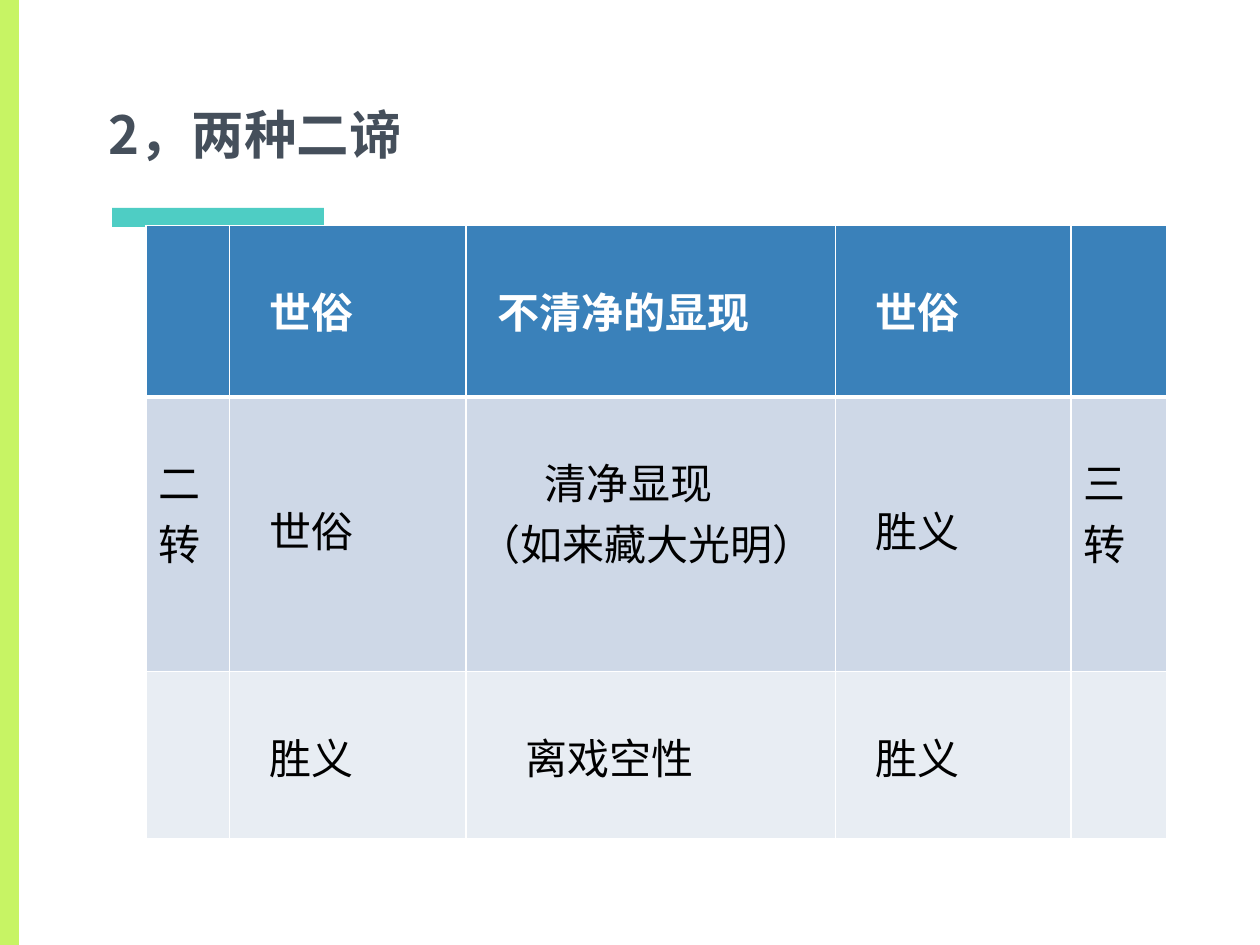
"""Build a slide comparing two pairs of the two truths in a table."""
from dataclasses import dataclass
from typing import Any

from lxml import etree
from pptx import Presentation
from pptx.dml.color import RGBColor
from pptx.enum import shapes, text
from pptx.oxml import ns
from pptx.util import Inches, Pt


@dataclass(frozen=True)
class Theme:
    title: str = "454F5B"
    stripe: str = "C7F464"
    accent: str = "4ECDC4"
    header: str = "3A81BA"
    body_fills: tuple[str, str] = ("CED8E7", "E8EDF3")
    white: str = "FFFFFF"
    black: str = "000000"
    latin: str = "Arial"
    chinese: str = "Noto Sans CJK SC"
    title_size: int = 30
    table_size: int = 24


@dataclass(frozen=True)
class Bar:
    left: float
    top: float
    width: float
    height: float
    color: str


@dataclass(frozen=True)
class Line:
    words: str
    indent: float = 0


@dataclass(frozen=True)
class Entry:
    lines: tuple[Line, ...] = ()
    top: float = 0.43


THEME = Theme()
BARS = (
    Bar(0.89, 1.65, 1.68, 0.15, THEME.accent),
    Bar(0, 0, 0.15, 7.5, THEME.stripe),
)
COLUMNS = (0.66, 1.88, 2.93, 1.87, 0.76)
ROWS = (1.36, 2.18, 1.33)
TERM_INDENT = 0.22
LOW = 0.81


def term(words: str, top: float = 0.43) -> Entry:
    """Return an entry holding one indented term."""
    return Entry((Line(words, TERM_INDENT),), top)


ENTRIES = (
    (Entry(), term("世俗"), Entry((Line("不清净的显现", 0.15),)), term("世俗"), Entry()),
    (
        Entry((Line("二转"),)),
        term("世俗", LOW),
        Entry((Line("清净显现", 0.52), Line("（如来藏大光明）"))),
        term("胜义", LOW),
        Entry((Line("三转"),)),
    ),
    (Entry(), term("胜义"), Entry((Line("离戏空性", 0.37),)), term("胜义"), Entry()),
)


def apply(target: Any, values: dict[str, Any]) -> None:
    """Set each named attribute on the target."""
    for name, value in values.items():
        setattr(target, name, value)


def style_run(run: Any, size: int, color: str, bold: bool, latin: str) -> None:
    """Format a run with its Latin and Chinese fonts."""
    apply(run.font, {"size": Pt(size), "bold": bold, "name": latin})
    run.font.color.rgb = RGBColor.from_string(color)
    properties = run._r.get_or_add_rPr()
    properties.set("lang", "zh-CN")
    etree.SubElement(properties, ns.qn("a:ea"), typeface=THEME.chinese)


def draw_bar(slide: Any, bar: Bar) -> None:
    """Draw a plain coloured bar."""
    box = map(Inches, (bar.left, bar.top, bar.width, bar.height))
    shape = slide.shapes.add_shape(shapes.MSO_SHAPE.RECTANGLE, *box)
    shape.shadow.inherit = False
    shape.fill.solid()
    shape.fill.fore_color.rgb = RGBColor.from_string(bar.color)
    shape.line.fill.background()


def draw_title(slide: Any, words: str) -> None:
    """Place and format the title placeholder."""
    title = slide.shapes.title
    apply(title, {"left": Inches(0.76), "top": Inches(0),
                  "width": Inches(8.49), "height": Inches(1.41)})
    margins = {f"margin_{side}": Inches(0.1) for side in ("left", "top", "right", "bottom")}
    apply(title.text_frame, margins | {
        "vertical_anchor": text.MSO_ANCHOR.BOTTOM,
        "auto_size": text.MSO_AUTO_SIZE.NONE,
        "word_wrap": True,
    })
    paragraph = title.text_frame.paragraphs[0]
    paragraph.alignment = text.PP_ALIGN.LEFT
    run = paragraph.add_run()
    run.text = words
    style_run(run, THEME.title_size, THEME.title, True, THEME.chinese)


def set_borders(cell: Any, widths: dict[str, float]) -> None:
    """Give a cell white borders of the given point widths."""
    properties = cell._tc.get_or_add_tcPr()
    for position, (side, width) in enumerate(widths.items()):
        border = etree.Element(ns.qn(f"a:ln{side}"), w=str(Pt(width)))
        fill = etree.SubElement(border, ns.qn("a:solidFill"))
        etree.SubElement(fill, ns.qn("a:srgbClr"), val=THEME.white)
        properties.insert(position, border)


def fill_cell(cell: Any, entry: Entry, row: int) -> None:
    """Fill, border and write one table cell."""
    is_header = row == 0
    cell.fill.solid()
    cell.fill.fore_color.rgb = RGBColor.from_string((THEME.header, *THEME.body_fills)[row])
    set_borders(cell, {"L": 1, "R": 1, "T": 3 if row == 1 else 1, "B": 3 if is_header else 1})
    apply(cell, {"margin_left": Inches(0.1), "margin_right": Inches(0.1),
                 "margin_top": Inches(entry.top), "margin_bottom": Inches(0.05)})
    for number, line in enumerate(entry.lines):
        frame = cell.text_frame
        paragraph = frame.add_paragraph() if number else frame.paragraphs[0]
        paragraph._p.get_or_add_pPr().set("marL", str(Inches(line.indent)))
        run = paragraph.add_run()
        run.text = line.words
        color = THEME.white if is_header else THEME.black
        style_run(run, THEME.table_size, color, is_header, THEME.latin)


def draw_table(slide: Any) -> None:
    """Draw the table of the two truths."""
    box = map(Inches, (1.16, 1.79, sum(COLUMNS), sum(ROWS)))
    table = slide.shapes.add_table(len(ROWS), len(COLUMNS), *box).table
    apply(table, {"first_row": False, "horz_banding": False})
    for column, width in zip(table.columns, COLUMNS):
        column.width = Inches(width)
    for row, height in enumerate(ROWS):
        table.rows[row].height = Inches(height)
        for column, entry in enumerate(ENTRIES[row]):
            fill_cell(table.cell(row, column), entry, row)


def main() -> None:
    """Build and save the presentation."""
    presentation = Presentation()
    apply(presentation, {"slide_width": Inches(10), "slide_height": Inches(7.5)})
    slide = presentation.slides.add_slide(presentation.slide_layouts[5])
    for bar in BARS:
        draw_bar(slide, bar)
    draw_title(slide, "2，两种二谛")
    draw_table(slide)
    presentation.save("out.pptx")


if __name__ == "__main__":
    main()
